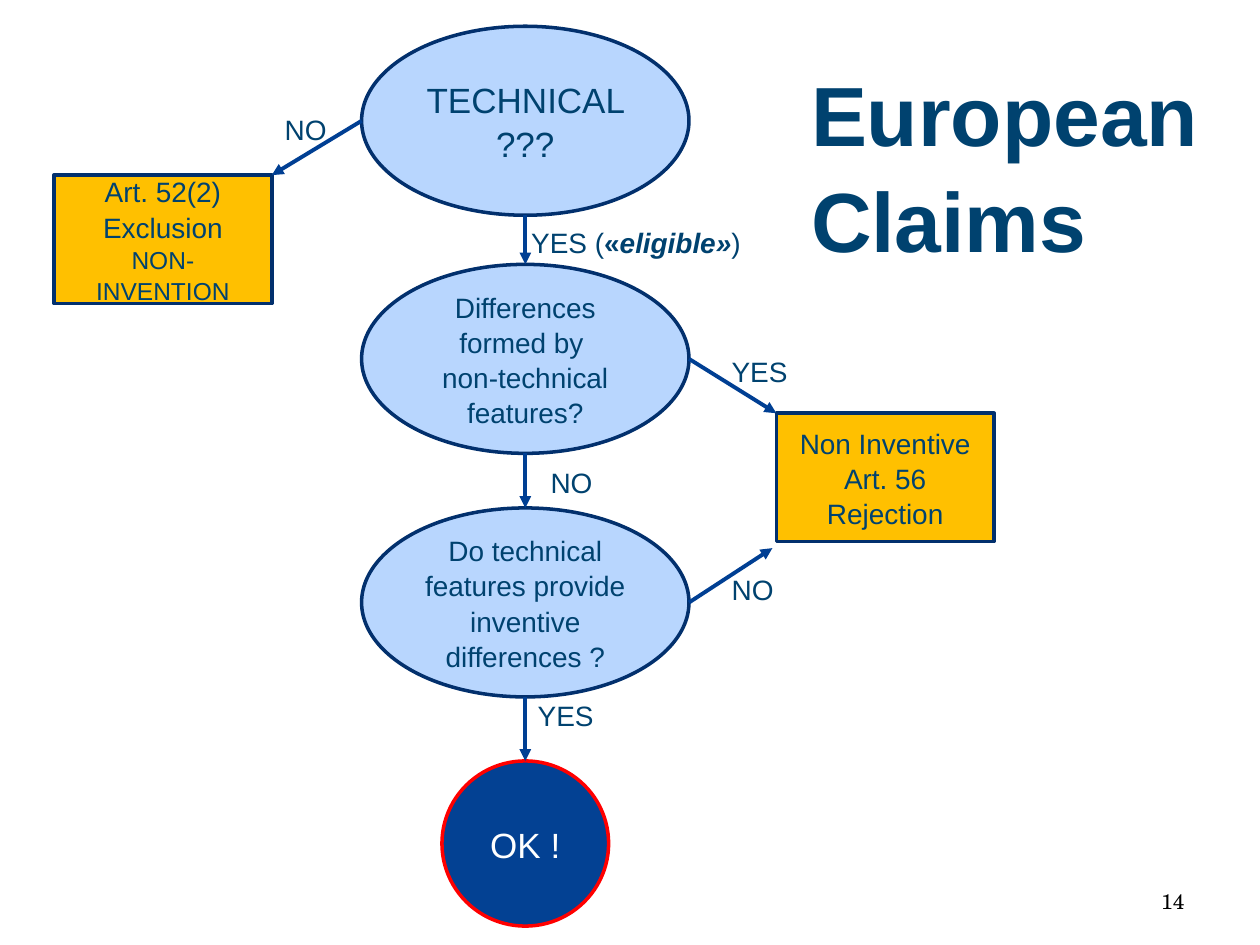
from dataclasses import dataclass

from lxml.etree import SubElement
from pptx import Presentation
from pptx.dml.color import RGBColor
from pptx.enum.shapes import MSO_CONNECTOR as Conn, MSO_SHAPE as Geo
from pptx.enum.text import MSO_ANCHOR as Anchor, PP_ALIGN as Align
from pptx.oxml.ns import qn
from pptx.util import Cm, Pt

COLORS = {
    "text": "00426F", "white": "FFFFFF", "black": "000000",
    "question": "B8D6FE", "rejection": "FFC000", "success": "034193",
    "outline": "02306D", "alert": "FF0000", "arrow": "003F93",
}
MID_X = 10.59
OVAL_W, OVAL_H = 6.6, 3.81
OVAL_X = MID_X - OVAL_W / 2
BOX_W, BOX_H = 4.39, 2.59
LABEL_H = 0.94


@dataclass
class Run:
    text: str
    bold: bool = False
    italic: bool = False
    size: float | None = None


@dataclass
class Node:
    geo: Geo
    x: float
    y: float
    w: float
    h: float
    paras: list
    fill: str
    line: str = "outline"
    size: float = 16
    color: str = "text"


@dataclass
class Label:
    x: float
    y: float
    w: float
    runs: list


@dataclass
class Arrow:
    x1: float
    y1: float
    x2: float
    y2: float


def rgb(name: str) -> RGBColor:
    return RGBColor.from_string(COLORS[name])


def write(tf, paras: list, *, size: float = 16, color: str = "text", font: str = "Arial",
          align=Align.LEFT, anchor=Anchor.TOP, spacing: float = 1.05,
          wrap: bool = True) -> None:
    tf.word_wrap = wrap
    tf.vertical_anchor = anchor
    for i, runs in enumerate(paras):
        p = tf.add_paragraph() if i else tf.paragraphs[0]
        p.alignment = align
        p.line_spacing = spacing
        for run in runs:
            r = p.add_run()
            r.text = run.text
            r.font.name = font
            r.font.size = Pt(run.size or size)
            r.font.bold = run.bold
            r.font.italic = run.italic
            r.font.color.rgb = rgb(color)


def add_text(s, x: float, y: float, w: float, h: float, paras: list, **fmt) -> None:
    write(s.shapes.add_textbox(Cm(x), Cm(y), Cm(w), Cm(h)).text_frame, paras, **fmt)


def add_node(s, n: Node) -> None:
    sp = s.shapes.add_shape(n.geo, Cm(n.x), Cm(n.y), Cm(n.w), Cm(n.h))
    sp.shadow.inherit = False
    sp.fill.solid()
    sp.fill.fore_color.rgb = rgb(n.fill)
    sp.line.color.rgb = rgb(n.line)
    sp.line.width = Pt(2)
    write(sp.text_frame, n.paras, size=n.size, color=n.color,
          align=Align.CENTER, anchor=Anchor.MIDDLE)


def add_arrow(s, a: Arrow) -> None:
    c = s.shapes.add_connector(Conn.STRAIGHT, Cm(a.x1), Cm(a.y1), Cm(a.x2), Cm(a.y2))
    c.line.color.rgb = rgb("arrow")
    c.line.width = Pt(2.25)
    SubElement(c.line._get_or_add_ln(), qn("a:tailEnd"), type="triangle")
    SubElement(c._element.spPr, qn("a:effectLst"))


def question(y: float, *lines: str, size: float = 16) -> Node:
    return Node(Geo.OVAL, OVAL_X, y, OVAL_W, OVAL_H, [[Run(t)] for t in lines],
                "question", size=size)


def rejection(x: float, y: float, *runs: Run) -> Node:
    return Node(Geo.RECTANGLE, x, y, BOX_W, BOX_H, [[r] for r in runs], "rejection")


TECHNICAL = question(0.53, "TECHNICAL ???", size=20)
DIFFERENCES = question(5.33, "Differences formed by ", "non-technical features?")
INVENTIVE = question(10.24, "Do technical features provide inventive differences ?")
EXCLUSION = rejection(1.09, 3.53, Run("Art. 52(2)"), Run("Exclusion"),
                      Run("NON-INVENTION", size=14))
NON_INVENTIVE = rejection(15.65, 8.33, Run("Non Inventive"), Run("Art. 56"),
                          Run("Rejection"))
OK = Node(Geo.OVAL, MID_X - 1.68, 15.34, 3.36, 3.33, [[Run("OK !")]],
          "success", "alert", 20, "white")
MAIN_PATH = [TECHNICAL, DIFFERENCES, INVENTIVE, OK]

OVAL_RIGHT = OVAL_X + OVAL_W
ARROWS = [Arrow(MID_X, a.y + a.h, MID_X, b.y) for a, b in zip(MAIN_PATH, MAIN_PATH[1:])] + [
    Arrow(OVAL_X, TECHNICAL.y + OVAL_H / 2, EXCLUSION.x + BOX_W, EXCLUSION.y),
    Arrow(OVAL_RIGHT, DIFFERENCES.y + OVAL_H / 2, NON_INVENTIVE.x, NON_INVENTIVE.y),
    Arrow(OVAL_RIGHT, INVENTIVE.y + OVAL_H / 2, 15.57, 11.05),
]
YES, NO = [Run("YES")], [Run("NO")]
YES_W, NO_W = 1.8, 1.4
LABELS = [
    Label(5.49, 2.11, NO_W, NO),
    Label(10.46, 4.39, 5.11, [Run("YES ("), Run("«", bold=True),
                              Run("eligible»", bold=True, italic=True), Run(")")]),
    Label(14.5, 6.99, YES_W, YES),
    Label(14.5, 11.38, NO_W, NO),
    Label(10.59, 13.92, YES_W, YES),
    Label(10.85, 9.22, NO_W, NO),
]


def main() -> None:
    prs = Presentation()
    prs.slide_width, prs.slide_height = Cm(25.4), Cm(19.05)
    s = prs.slides.add_slide(prs.slide_layouts[6])
    for n in MAIN_PATH + [EXCLUSION, NON_INVENTIVE]:
        add_node(s, n)
    for a in ARROWS:
        add_arrow(s, a)
    for lb in LABELS:
        add_text(s, lb.x, lb.y, lb.w, LABEL_H, [lb.runs])
    add_text(s, 16.1, 1.04, 8.41, 4.37, [[Run("European", bold=True)], [Run("Claims", bold=True)]],
             size=48, wrap=False)
    add_text(s, 18.21, 17.65, 5.92, 1.02, [[Run("14")]], size=12, color="black",
             font="TeX Gyre Schola", align=Align.RIGHT, anchor=Anchor.MIDDLE, spacing=1)
    prs.save("out.pptx")


if __name__ == "__main__":
    main()
